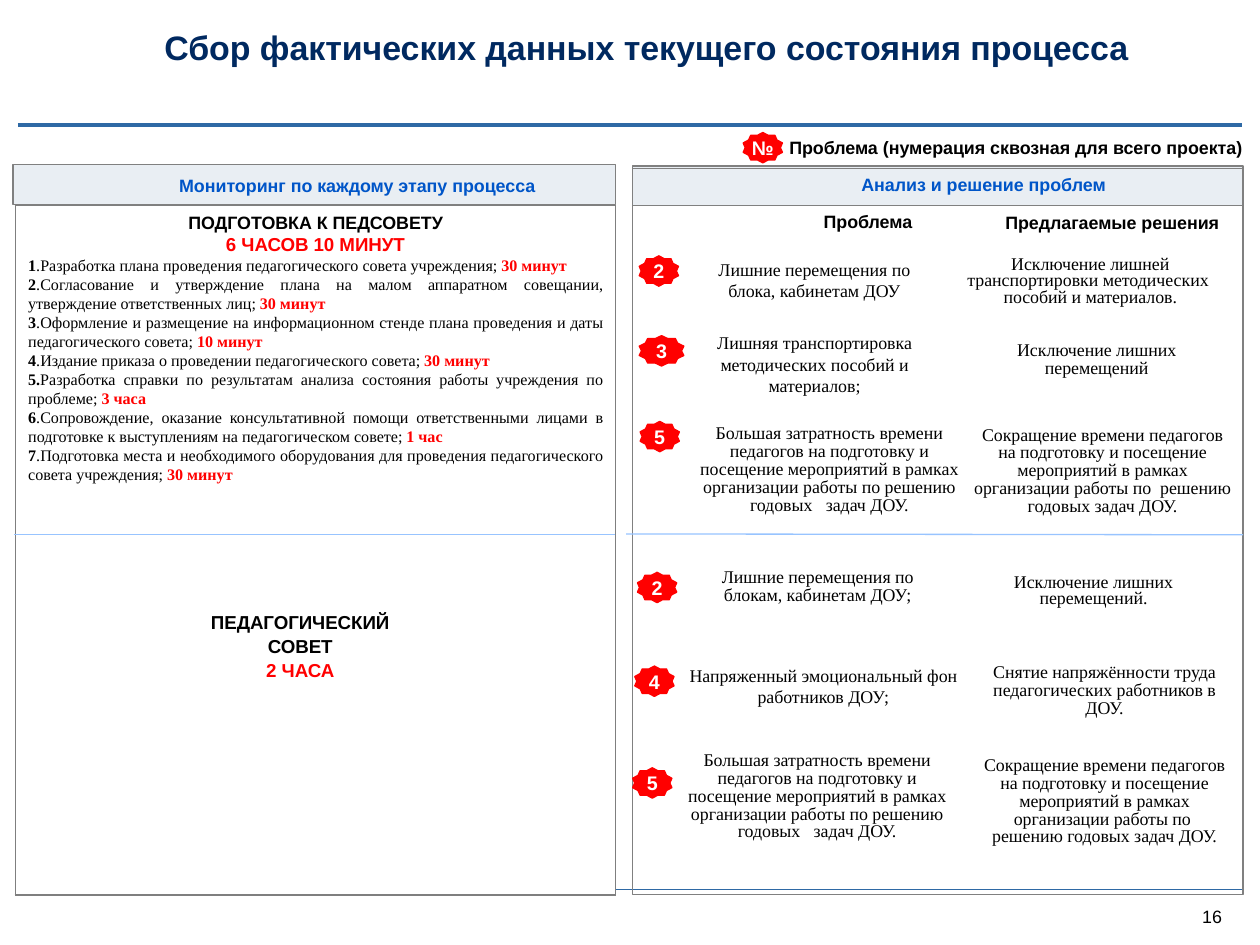
from pptx import Presentation
from pptx.dml.color import RGBColor
from pptx.enum.shapes import MSO_CONNECTOR as Conn, MSO_SHAPE as Kind
from pptx.enum.text import MSO_ANCHOR as Anchor, MSO_AUTO_SIZE as Auto, PP_ALIGN as Align
from pptx.oxml import parse_xml
from pptx.oxml.ns import nsdecls
from pptx.util import Pt

SANS, SERIF = "Arial", "Times New Roman"
BLACK, WHITE, RED = "000000", "FFFFFF", "FF0000"
NAVY, BLUE, STEEL, SKY = "002960", "0055C8", "2E69A5", "98C4FF"
PALE, GRAY, EDGE = "E9EEF3", "808080", "7F7F7F"

# Steps of the first stage: number, task, time
STEPS = [
    ("1", ".Разработка плана проведения педагогического совета учреждения; ", "30 минут"),
    ("2", ".Согласование и утверждение плана на малом аппаратном совещании, "
          "утверждение ответственных лиц; ", "30 минут"),
    ("3", ".Оформление и размещение на информационном стенде плана проведения "
          "и даты педагогического совета; ", "10 минут"),
    ("4", ".Издание приказа о проведении педагогического совета; ", "30 минут"),
    ("5.", "Разработка справки по результатам анализа состояния работы "
           "учреждения по проблеме; ", "3 часа"),
    ("6", ".Сопровождение, оказание консультативной помощи ответственными лицами "
          "в подготовке к выступлениям на педагогическом совете; ", "1 час"),
    ("7", ".Подготовка места и необходимого оборудования для проведения "
          "педагогического совета учреждения; ", "30 минут"),
]

# Problems and solutions: badge, then text, box and line spacing of each
WASTE = ("Большая затратность времени педагогов на подготовку и посещение "
         "мероприятий в рамках организации работы по решению годовых   задач ДОУ.")
SAVING = ("Сокращение времени педагогов на подготовку и посещение мероприятий "
          "в рамках организации работы по  решению годовых задач ДОУ.")
ROWS = [
    (("2", 358, 143.3),
     ("Лишние перемещения по блока, кабинетам ДОУ", (390, 144.7, 132, 24), None),
     ("Исключение лишней транспортировки методических  пособий и материалов.",
      (536.4, 144.7, 148.3, 27), 9)),
    (("3", 358, 188, 25),
     ("Лишняя транспортировка методических пособий и материалов;",
      (382.3, 185.8, 147.6, 36), None),
     ("Исключение лишних перемещений", (544.3, 191.5, 139.7, 20), 10)),
    (("5", 358.5, 236),
     (WASTE, (385.2, 238.3, 158.4, 50), 10),
     (SAVING, (544.3, 239, 146.2, 50), 10)),
    (("2", 357, 320.5),
     ("Лишние перемещения по блокам, кабинетам ДОУ;", (387.4, 319, 141, 20), 10),
     ("Исключение лишних перемещений.", (544.3, 322.6, 136.1, 18), 9)),
    (("4", 355.5, 373),
     ("Напряженный эмоциональный фон работников ДОУ;",
      (383, 372.2, 156.2, 24), None),
     ("Снятие напряжённости труда педагогических работников в ДОУ.",
      (547.2, 372.2, 142.6, 30), 10)),
    (("5", 354.3, 430),
     (WASTE, (378.7, 421.2, 157.7, 50), 10),
     (SAVING, (547.2, 424, 142.6, 50), 10)),
]


def rgb(hue):
    return RGBColor.from_string(hue)


def style(font, size, hue=BLACK, face=SANS, bold=True):
    font.name, font.size, font.bold = face, Pt(size), bold
    font.color.rgb = rgb(hue)


def clear(frame):
    frame.margin_left = frame.margin_right = Pt(0)
    frame.margin_top = frame.margin_bottom = Pt(0)


def fill_par(par, text, size, hue=BLACK, face=SANS, bold=True,
             align=Align.CENTER, lead=None):
    par.text = text
    par.alignment = align
    if lead:
        par.line_spacing = lead
    style(par.font, size, hue, face, bold)


def label(slide, text, box, size=10, **look):
    frame = slide.shapes.add_textbox(*map(Pt, box)).text_frame
    frame.word_wrap = True
    clear(frame)
    fill_par(frame.paragraphs[0], text, size, **look)
    return frame


def panel(slide, box, fill=None):
    rect = slide.shapes.add_shape(Kind.RECTANGLE, *map(Pt, box))
    rect.shadow.inherit = False
    if fill:
        rect.fill.solid()
        rect.fill.fore_color.rgb = rgb(fill)
    else:
        rect.fill.background()
    rect.line.color.rgb = rgb(GRAY)
    rect.line.width = Pt(0.75)


def badge(slide, text, x, y, wide=22):
    star = slide.shapes.add_shape(Kind.STAR_10_POINT, Pt(x), Pt(y), Pt(wide), Pt(17))
    star.shadow.inherit = False
    star.fill.solid()
    star.fill.fore_color.rgb = star.line.color.rgb = rgb(RED)
    star.line.width = Pt(0.75)
    frame = star.text_frame
    clear(frame)
    frame.word_wrap = False
    frame.vertical_anchor = Anchor.MIDDLE
    fill_par(frame.paragraphs[0], text, 11, WHITE)


def rule(slide, start, end, hue, wide=0.75):
    line = slide.shapes.add_connector(Conn.STRAIGHT, *map(Pt, start + end))
    line.line.color.rgb = rgb(hue)
    line.line.width = Pt(wide)
    line._element.spPr.append(parse_xml(f"<a:effectLst {nsdecls('a')}/>"))


def heading(slide, text):
    title = slide.shapes.title
    title.left, title.top, title.width, title.height = map(Pt, (92, 15, 550, 23))
    frame = title.text_frame
    clear(frame)
    frame.auto_size = Auto.NONE
    frame.vertical_anchor = Anchor.MIDDLE
    fill_par(frame.paragraphs[0], text, 19, NAVY, align=Align.LEFT)


def stage(slide, box):
    table = slide.shapes.add_table(1, 1, *map(Pt, box)).table
    table.first_row = table.horz_banding = False
    cell = table.cell(0, 0)
    # Borders come before the fill in the cell properties
    props = cell._tc.get_or_add_tcPr()
    for side in "LRTB":
        props.append(parse_xml(
            f'<a:ln{side} {nsdecls("a")} w="{Pt(1)}"><a:solidFill>'
            f'<a:srgbClr val="{EDGE}"/></a:solidFill></a:ln{side}>'))
    cell.fill.solid()
    cell.fill.fore_color.rgb = rgb(WHITE)
    frame = cell.text_frame
    fill_par(frame.paragraphs[0], "ПОДГОТОВКА К ПЕДСОВЕТУ", 10, lead=1.07)
    fill_par(frame.add_paragraph(), "6 ЧАСОВ 10 МИНУТ", 10.5, RED, lead=1.07)
    for num, task, time in STEPS:
        par = frame.add_paragraph()
        par.alignment = Align.JUSTIFY
        par.line_spacing = 1.07
        for text, hue, bold in ((num, BLACK, True), (task, BLACK, False), (time, RED, True)):
            run = par.add_run()
            run.text = text
            style(run.font, 9, hue, SERIF, bold)


def main():
    deck = Presentation()
    deck.slide_width, deck.slide_height = Pt(705.6), Pt(529.2)
    slide = deck.slides.add_slide(deck.slide_layouts[5])

    # Frame of the page
    rule(slide, (9.4, 498.2), (695.5, 498.2), STEEL)
    rule(slide, (10, 69.8), (695.5, 69.8), STEEL, 2.25)
    label(slide, "16", (673.2, 507, 18, 12), bold=False, align=Align.LEFT)
    heading(slide, "Сбор фактических данных текущего состояния процесса")

    # Legend
    badge(slide, "№", 416.2, 74.2)
    label(slide, "Проблема (нумерация сквозная для всего проекта)",
          (442, 76.3, 259, 12), align=Align.LEFT)

    # Column headers
    panel(slide, (7.2, 92.2, 337.7, 22.3), PALE)
    label(slide, "Мониторинг по каждому этапу процесса", (62, 98, 276, 12), hue=BLUE)
    panel(slide, (354.2, 92.9, 342, 22.3), PALE)
    label(slide, "Анализ и решение проблем", (465, 97.2, 171.5, 12), hue=BLUE)

    # Stages
    stage(slide, (8.6, 115.2, 336.2, 386))
    rule(slide, (8, 299.5), (344.2, 299.5), SKY)
    frame = label(slide, "ПЕДАГОГИЧЕСКИЙ", (53.3, 341.3, 229.7, 42), 10.5, lead=1.07)
    for text, hue in (("СОВЕТ", BLACK), ("2 ЧАСА", RED)):
        fill_par(frame.add_paragraph(), text, 10.5, hue, lead=1.07)

    # Problems and solutions
    panel(slide, (354.2, 94.3, 342, 406.8))
    label(slide, "Проблема", (436.3, 118, 99.4, 12))
    label(slide, "Предлагаемые решения", (563, 118.5, 131.8, 12), align=Align.LEFT)
    rule(slide, (350.6, 299), (696.2, 299.5), SKY)
    for mark, *notes in ROWS:
        badge(slide, *mark)
        for text, box, lead in notes:
            label(slide, text, box, face=SERIF, bold=False, lead=lead and Pt(lead))

    deck.save("out.pptx")


if __name__ == "__main__":
    main()
